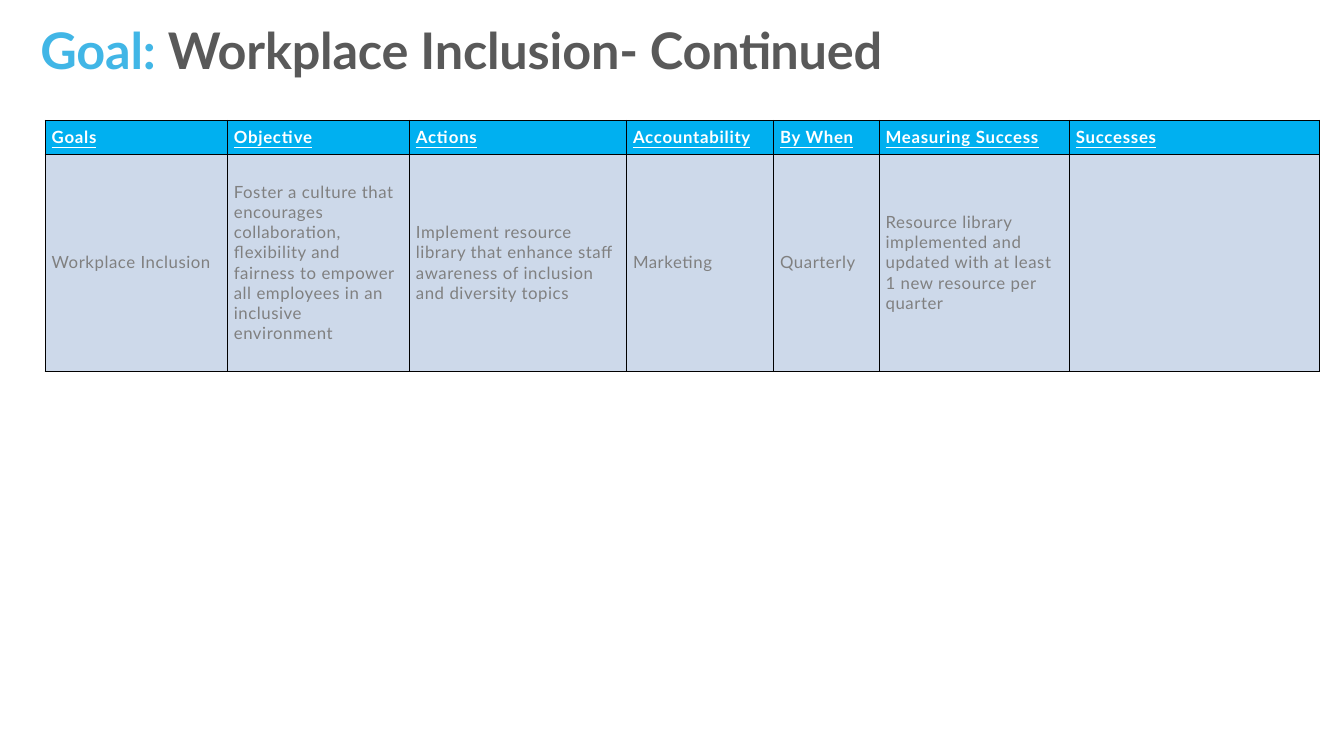
from lxml.etree import SubElement
from pptx import Presentation
from pptx.dml.color import RGBColor
from pptx.enum.text import MSO_ANCHOR, MSO_AUTO_SIZE, PP_ALIGN
from pptx.oxml.ns import qn
from pptx.util import Inches, Pt

FONT = "Lato"
COLORS = {
    "accent": "41B6E6",
    "title": "595959",
    "header_fill": "00B0F0",
    "header_text": "FFFFFF",
    "body_fill": "CDD9EA",
    "body_text": "808080",
    "border": "000000",
}
TITLE = [("Goal: ", "accent"), ("Workplace Inclusion- Continued", "title")]
COLUMNS = [
    ("Goals", 2.71, "Workplace Inclusion"),
    ("Objective", 2.71, "Foster a culture that encourages collaboration, flexibility and "
     "fairness to empower all employees in an inclusive environment"),
    ("Actions", 3.23, "Implement resource library that enhance staff awareness of "
     "inclusion and diversity topics"),
    ("Accountability", 2.19, "Marketing"),
    ("By When", 1.57, "Quarterly"),
    ("Measuring Success", 2.83, "Resource library implemented and updated with at least "
     "1 new resource per quarter"),
    ("Successes", 3.73, ""),
]
ROW_HEIGHTS = [0.5, 3.23]
TABLE_LEFT, TABLE_TOP = 0.67, 1.79
MARGIN = Inches(0.1)


def add_run(paragraph, text, color, size, spacing, bold=False, underline=False):
    run = paragraph.add_run()
    run.text = text
    font = run.font
    font.name, font.size = FONT, Pt(size)
    font.bold, font.underline = bold, underline
    font.color.rgb = RGBColor.from_string(COLORS[color])
    run._r.get_or_add_rPr().set("spc", str(spacing))


def add_borders(cell):
    properties = cell._tc.get_or_add_tcPr()
    for side in ("L", "R", "T", "B"):
        line = SubElement(properties, qn(f"a:ln{side}"), w=str(Pt(1)))
        fill = SubElement(line, qn("a:solidFill"))
        SubElement(fill, qn("a:srgbClr"), val=COLORS["border"])


def fill_cell(cell, text, role, **style):
    add_borders(cell)
    cell.fill.solid()
    cell.fill.fore_color.rgb = RGBColor.from_string(COLORS[f"{role}_fill"])
    cell.vertical_anchor = MSO_ANCHOR.MIDDLE
    cell.margin_left = cell.margin_right = cell.margin_top = cell.margin_bottom = MARGIN
    paragraph = cell.text_frame.paragraphs[0]
    paragraph.line_spacing = Pt(21.6)
    if text:
        add_run(paragraph, text, f"{role}_text", 18, **style)


def add_title(slide):
    title = slide.shapes.title
    title.left, title.top = Inches(0.6), Inches(0.28)
    title.width, title.height = Inches(16.89), Inches(1.1)
    frame = title.text_frame
    frame.margin_left = frame.margin_right = frame.margin_top = frame.margin_bottom = 0
    frame.vertical_anchor = MSO_ANCHOR.TOP
    frame.auto_size = MSO_AUTO_SIZE.NONE
    frame.word_wrap = True
    paragraph = frame.paragraphs[0]
    paragraph.alignment = PP_ALIGN.LEFT
    paragraph.line_spacing = Pt(64.8)
    for text, color in TITLE:
        add_run(paragraph, text, color, 54, -20, bold=True)


def add_goal_table(slide):
    table = slide.shapes.add_table(
        len(ROW_HEIGHTS), len(COLUMNS), Inches(TABLE_LEFT), Inches(TABLE_TOP),
        Inches(sum(width for _, width, _ in COLUMNS)), Inches(sum(ROW_HEIGHTS)),
    ).table
    for row, height in zip(table.rows, ROW_HEIGHTS):
        row.height = Inches(height)
    for index, (heading, width, body) in enumerate(COLUMNS):
        table.columns[index].width = Inches(width)
        fill_cell(table.cell(0, index), heading, "header", spacing=80, bold=True, underline=True)
        fill_cell(table.cell(1, index), body, "body", spacing=60)


def main():
    """Build the workplace inclusion goal slide."""
    presentation = Presentation()
    presentation.slide_width, presentation.slide_height = Inches(20), Inches(11.25)
    slide = presentation.slides.add_slide(presentation.slide_layouts[5])
    add_title(slide)
    add_goal_table(slide)
    presentation.save("out.pptx")


if __name__ == "__main__":
    main()
